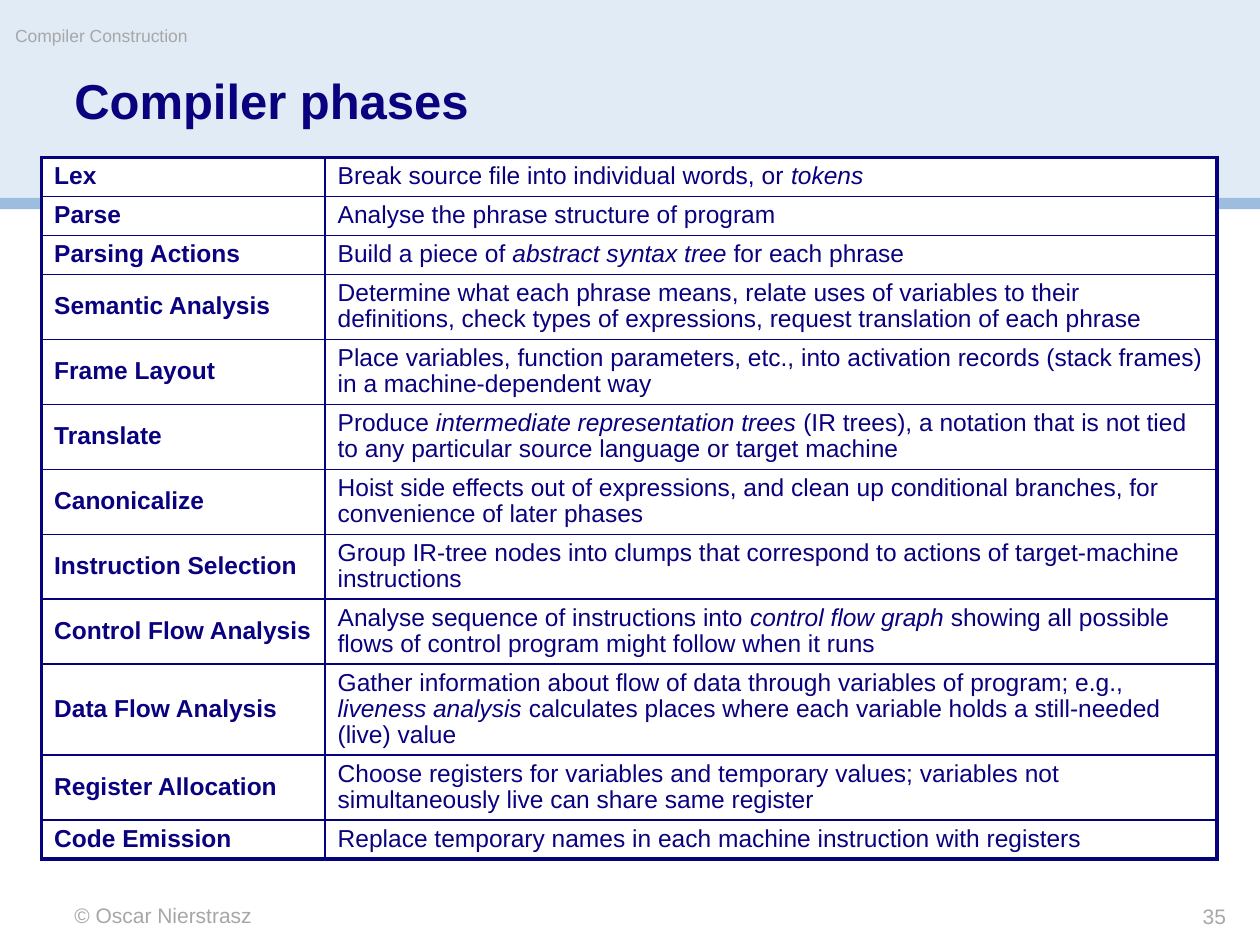
from dataclasses import dataclass

from lxml import etree
from pptx import Presentation
from pptx.dml.color import RGBColor
from pptx.enum.shapes import MSO_SHAPE
from pptx.enum.text import MSO_ANCHOR, PP_ALIGN
from pptx.oxml.ns import qn
from pptx.util import Inches, Pt

RECTANGLE = MSO_SHAPE.RECTANGLE
TOP, MIDDLE = MSO_ANCHOR.TOP, MSO_ANCHOR.MIDDLE
LEFT, RIGHT = PP_ALIGN.LEFT, PP_ALIGN.RIGHT
WIDTH, HEIGHT = Inches(10), Inches(7.5)
TITLE_ONLY = 5


@dataclass(frozen=True)
class Theme:
    """Colours, type sizes and line widths of the slide."""
    font: str = "Arial"
    ink: str = "0A017F"
    rule: str = "05027D"
    muted: str = "A7A7A7"
    paper: str = "FFFFFF"
    header: str = "E1EBF5"
    stripe: str = "9CBDDE"
    title_size: float = 28
    table_size: float = 14
    footer_size: float = 12
    course_size: float = 10
    thin: float = 1
    thick: float = 2.25


@dataclass(frozen=True)
class Area:
    """A rectangle in percent of the slide's width and height."""
    left: float
    top: float
    width: float
    height: float

    def lengths(self) -> tuple:
        """Return left, top, width and height as lengths."""
        return across(self.left), down(self.top), across(self.width), down(self.height)


@dataclass(frozen=True)
class Label:
    """A small grey line of text at the edge of the slide."""
    text: str
    area: Area
    size: float
    align: PP_ALIGN = LEFT
    wrap: bool = True


@dataclass(frozen=True)
class Phase:
    """A compiler phase; asterisks enclose the italic terms."""
    name: str
    task: str
    lines: int = 2


THEME = Theme()
BANDS = [
    (Area(0, 0, 100, 21.07), THEME.header),
    (Area(0, 20.93, 100, 1.2), THEME.stripe),
]
LABELS = [
    Label("© Oscar Nierstrasz", Area(5.9, 95.47, 41.7, 2.67), THEME.footer_size),
    Label("Compiler Construction", Area(1.2, 2.67, 59, 3.73), THEME.course_size, wrap=False),
    Label("35", Area(82.5, 95.6, 14.8, 2.67), THEME.footer_size, RIGHT),
]
TITLE_AREA = Area(5.9, 8.13, 88.3, 11.87)
TABLE_AREA = Area(3.3, 16.67, 93.3, 74.2)
COLUMNS = (22.5, 70.8)
FIRST_LINE, NEXT_LINE = 4.13, 2.67
PHASES = [
    Phase("Lex", "Break source ﬁle into individual words, or *tokens*", 1),
    Phase("Parse", "Analyse the phrase structure of program", 1),
    Phase("Parsing Actions", "Build a piece of *abstract syntax tree* for each phrase", 1),
    Phase("Semantic Analysis", "Determine what each phrase means, relate uses of variables to "
          "their definitions, check types of expressions, request translation of each phrase"),
    Phase("Frame Layout", "Place variables, function parameters, etc., into activation records "
          "(stack frames) in a machine-dependent way"),
    Phase("Translate", "Produce *intermediate representation trees* (IR trees), a notation that "
          "is not tied to any particular source language or target machine"),
    Phase("Canonicalize", "Hoist side effects out of expressions, and clean up conditional "
          "branches, for convenience of later phases"),
    Phase("Instruction Selection", "Group IR-tree nodes into clumps that correspond to actions "
          "of target-machine instructions"),
    Phase("Control Flow Analysis", "Analyse sequence of instructions into *control ﬂow graph* "
          "showing all possible flows of control program might follow when it runs"),
    Phase("Data Flow Analysis", "Gather information about flow of data through variables of "
          "program; e.g., *liveness analysis* calculates places where each variable holds a "
          "still-needed (live) value", 3),
    Phase("Register Allocation", "Choose registers for variables and temporary values; variables "
          "not simultaneously live can share same register"),
    Phase("Code Emission", "Replace temporary names in each machine instruction with registers", 1),
]


def across(percent: float) -> int:
    """Turn a share of the slide's width into a length."""
    return round(WIDTH * percent / 100)


def down(percent: float) -> int:
    """Turn a share of the slide's height into a length."""
    return round(HEIGHT * percent / 100)


def write(para, text: str, size: float, color: str, bold: bool = False) -> None:
    """Write text into a paragraph, with italics between asterisks."""
    for index, part in enumerate(text.split("*")):
        if part:
            span = para.add_run()
            span.text = part
            if index % 2:
                span.font.italic = True
    font = para.font
    font.name, font.size, font.bold = THEME.font, Pt(size), bold
    font.color.rgb = RGBColor.from_string(color)


def clear_margins(frame) -> None:
    """Start the text at the top left corner of its box."""
    frame.margin_left = frame.margin_top = frame.margin_right = frame.margin_bottom = 0
    frame.vertical_anchor = TOP


def draw_band(page, area: Area, color: str) -> None:
    """Draw a plain band across the slide."""
    band = page.shapes.add_shape(RECTANGLE, *area.lengths())
    band.shadow.inherit = False
    band.fill.solid()
    band.fill.fore_color.rgb = RGBColor.from_string(color)
    band.line.fill.background()


def draw_label(page, label: Label) -> None:
    """Draw a grey line of text."""
    frame = page.shapes.add_textbox(*label.area.lengths()).text_frame
    clear_margins(frame)
    frame.word_wrap = label.wrap
    para = frame.paragraphs[0]
    para.alignment = label.align
    write(para, label.text, label.size, THEME.muted)


def draw_title(page, text: str) -> None:
    """Format the title placeholder and bring it to the front."""
    title = page.shapes.title
    title.left, title.top, title.width, title.height = TITLE_AREA.lengths()
    clear_margins(title.text_frame)
    para = title.text_frame.paragraphs[0]
    para.alignment, para.line_spacing = LEFT, 0.9
    write(para, text, THEME.title_size, THEME.ink, bold=True)
    title.element.getparent().append(title.element)


def set_borders(cell, outer: dict[str, bool]) -> None:
    """Rule the four sides of a cell, thick on the table's outer edge."""
    properties = cell._tc.get_or_add_tcPr()
    for position, (side, is_outer) in enumerate(outer.items()):
        width = Pt(THEME.thick if is_outer else THEME.thin)
        line = etree.Element(qn(f"a:{side}"), w=str(width))
        fill = etree.SubElement(line, qn("a:solidFill"))
        etree.SubElement(fill, qn("a:srgbClr"), val=THEME.rule)
        properties.insert(position, line)


def draw_phases(page, phases: list[Phase]) -> None:
    """Draw the table of compiler phases."""
    last = len(phases) - 1
    table = page.shapes.add_table(len(phases), len(COLUMNS), *TABLE_AREA.lengths()).table
    table.first_row = table.horz_banding = False
    for column, share in zip(table.columns, COLUMNS):
        column.width = across(share)
    for row, phase in enumerate(phases):
        table.rows[row].height = down(FIRST_LINE + NEXT_LINE * (phase.lines - 1))
        for column, text in enumerate((phase.name, phase.task)):
            cell = table.cell(row, column)
            cell.vertical_anchor = MIDDLE
            cell.fill.solid()
            cell.fill.fore_color.rgb = RGBColor.from_string(THEME.paper)
            set_borders(cell, {"lnL": column == 0, "lnR": column == 1,
                               "lnT": row == 0, "lnB": row == last})
            para = cell.text_frame.paragraphs[0]
            para.line_spacing = 0.95
            write(para, text, THEME.table_size, THEME.ink, bold=column == 0)


def main() -> None:
    """Build the slide and save it."""
    deck = Presentation()
    deck.slide_width, deck.slide_height = WIDTH, HEIGHT
    page = deck.slides.add_slide(deck.slide_layouts[TITLE_ONLY])
    for area, color in BANDS:
        draw_band(page, area, color)
    draw_title(page, "Compiler phases")
    draw_phases(page, PHASES)
    for label in LABELS:
        draw_label(page, label)
    deck.save("out.pptx")


if __name__ == "__main__":
    main()
